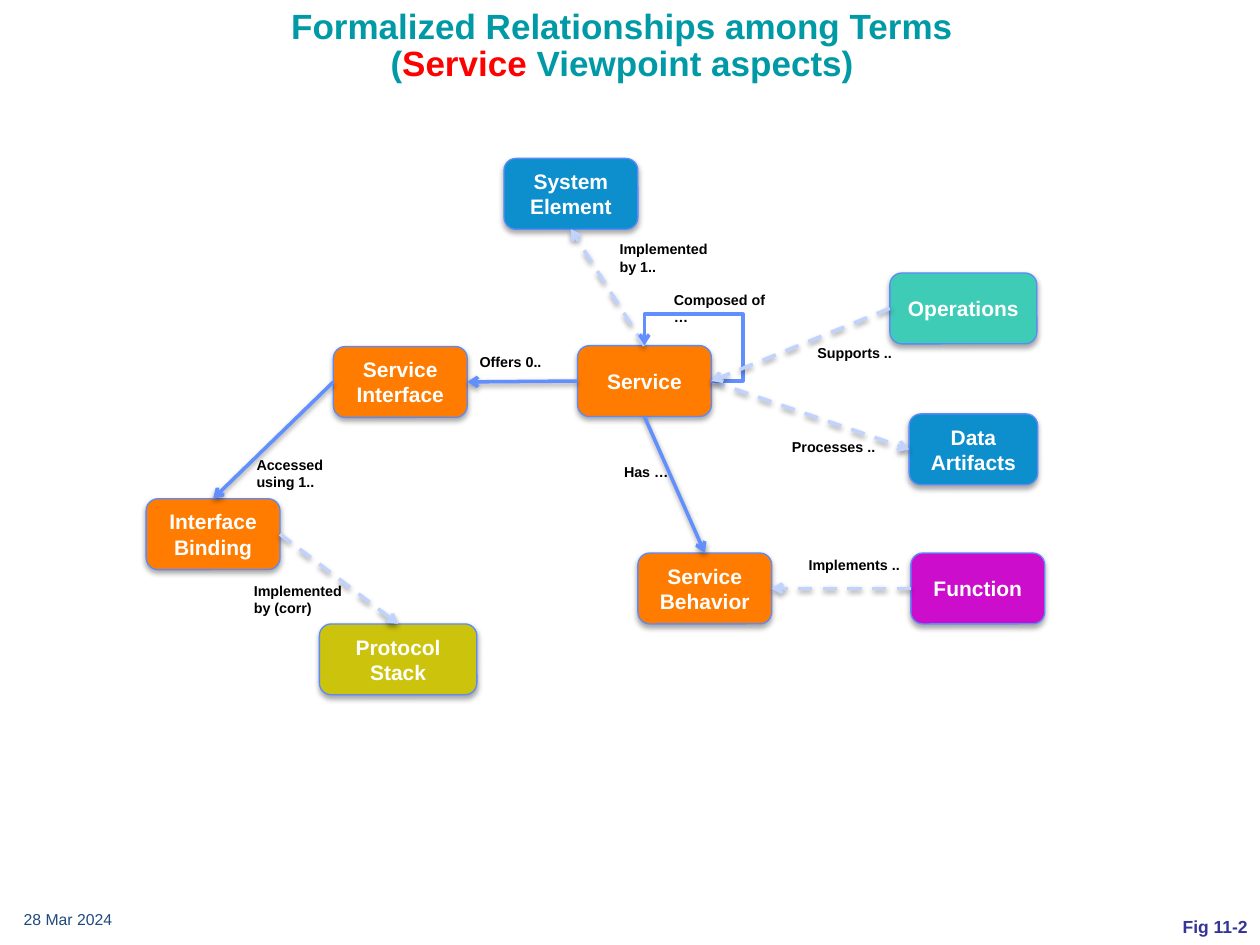
"""Build the slide on formalized relationships among service viewpoint terms."""
from lxml import etree
from pptx import Presentation
from pptx.dml.color import RGBColor
from pptx.enum import dml, shapes, text
from pptx.oxml.ns import qn
from pptx.util import Pt

TEAL = RGBColor(0x00, 0x99, 0xA6)
RED = RGBColor(0xFF, 0x00, 0x00)
BLACK = RGBColor(0x00, 0x00, 0x00)
WHITE = RGBColor(0xFF, 0xFF, 0xFF)
ORANGE = RGBColor(0xFF, 0x7C, 0x00)
BLUE = RGBColor(0x0C, 0x8F, 0xCC)
MINT = RGBColor(0x3F, 0xCC, 0xB6)
MAGENTA = RGBColor(0xCC, 0x0E, 0xCC)
OLIVE = RGBColor(0xCC, 0xC3, 0x0C)
BORDER = RGBColor(0x5B, 0x8A, 0xFB)
SOLID = RGBColor(0x61, 0x8F, 0xFD)
PALE = RGBColor(0xC0, 0xD2, 0xFE)
NAVY = RGBColor(0x1F, 0x49, 0x7D)
INDIGO = RGBColor(0x33, 0x33, 0x99)
TOP, LEFT, BOTTOM, RIGHT = range(4)


def add_span(para, wording, size, color, bold=True):
    """Add one formatted run to a paragraph."""
    span = para.add_run()
    span.text = wording
    span.font.name = "Arial"
    span.font.size = Pt(size)
    span.font.bold = bold
    span.font.color.rgb = color


def add_shadow(effects, distance, opacity):
    """Put a soft downward shadow into an effect list."""
    shadow = etree.SubElement(effects, qn("a:outerShdw"), blurRad=str(Pt(3.15)),
                              dist=str(Pt(distance)), dir="5400000", rotWithShape="0")
    tint = etree.SubElement(shadow, qn("a:srgbClr"), val=str(BLACK))
    etree.SubElement(tint, qn("a:alpha"), val=str(opacity * 1000))


deck = Presentation()
deck.slide_width, deck.slide_height = Pt(720), Pt(540)
page = deck.slides.add_slide(deck.slide_layouts[5])

title = page.shapes.title
title.left, title.top, title.width, title.height = Pt(31.5), Pt(1.5), Pt(648), Pt(60.5)
title.text_frame.auto_size = text.MSO_AUTO_SIZE.NONE
title.text_frame.vertical_anchor = text.MSO_ANCHOR.TOP
para = title.text_frame.paragraphs[0]
para.alignment = text.PP_ALIGN.CENTER
para.line_spacing = 0.9
add_span(para, "Formalized Relationships among Terms", 20, TEAL)
para.add_line_break()
add_span(para, "(", 20, TEAL)
add_span(para, "Service", 20, RED)
add_span(para, " Viewpoint aspects)", 20, TEAL)

terms = [
    ("Service\nBehavior", 364.5, 316, 76.5, ORANGE),
    ("System\nElement", 288, 90.5, 76.5, BLUE),
    ("Service", 330, 197.5, 76.5, ORANGE),
    ("Data\nArtifacts", 519.5, 236.5, 73.5, BLUE),
    ("Service\nInterface", 190.5, 198, 76.5, ORANGE),
    ("Interface\nBinding", 83.5, 285, 76.5, ORANGE),
    ("Operations", 508.5, 156, 84, MINT),
    ("Function", 520.5, 316, 76.5, MAGENTA),
    ("Protocol\nStack", 182.5, 356.5, 90, OLIVE),
]
boxes = {}
for name, left, top, width, color in terms:
    box = page.shapes.add_shape(shapes.MSO_SHAPE.ROUNDED_RECTANGLE,
                                Pt(left), Pt(top), Pt(width), Pt(40.5))
    box.fill.solid()
    box.fill.fore_color.rgb = color
    box.line.color.rgb = BORDER
    box.line.width = Pt(0.75)
    box.shadow.inherit = False
    add_shadow(box.element.spPr.find(qn("a:effectLst")), 1.8, 35)
    frame = box.text_frame
    frame.vertical_anchor = text.MSO_ANCHOR.MIDDLE
    for index, word in enumerate(name.split("\n")):
        para = frame.add_paragraph() if index else frame.paragraphs[0]
        para.alignment = text.PP_ALIGN.CENTER
        add_span(para, word, 12, WHITE)
    boxes[name.replace("\n", " ")] = box

relations = [
    ("Service", RIGHT, "Data Artifacts", LEFT, True),
    ("Service", TOP, "System Element", BOTTOM, True),
    ("Service", LEFT, "Service Interface", RIGHT, False),
    ("Service", BOTTOM, "Service Behavior", TOP, False),
    ("Service", RIGHT, "Service", TOP, False),
    ("Service Interface", LEFT, "Interface Binding", TOP, False),
    ("Operations", LEFT, "Service", RIGHT, True),
    ("Function", LEFT, "Service Behavior", RIGHT, True),
    ("Interface Binding", RIGHT, "Protocol Stack", TOP, True),
]
for source, source_side, target, target_side, dashed in relations:
    if source == target:
        link = page.shapes.add_connector(shapes.MSO_CONNECTOR.ELBOW,
                                         Pt(406.5), Pt(217.75), Pt(368.25), Pt(197.5))
        outline = link.element.spPr.find(qn("a:prstGeom"))
        outline.set("prst", "bentConnector4")
        guides = outline.find(qn("a:avLst"))
        for guide, value in (("adj1", -47100), ("adj2", 188900)):
            etree.SubElement(guides, qn("a:gd"), name=guide, fmla=f"val {value}")
    else:
        link = page.shapes.add_connector(shapes.MSO_CONNECTOR.STRAIGHT, 0, 0, 0, 0)
        link.begin_connect(boxes[source], source_side)
        link.end_connect(boxes[target], target_side)
    link.line.color.rgb = PALE if dashed else SOLID
    link.line.width = Pt(2)
    if dashed:
        link.line.dash_style = dml.MSO_LINE.DASH
    properties = link.element.spPr
    etree.SubElement(properties.find(qn("a:ln")), qn("a:tailEnd"), type="arrow")
    effects = etree.SubElement(properties, qn("a:effectLst"))
    if source != target:
        add_shadow(effects, 1.6, 38)

labels = [
    ("Processes ..", 445.5, 247, 63.5, 17.5, False),
    ("Implemented by 1..", 347, 134, 68.5, 27.5, True),
    ("Offers 0..", 267, 198, 54, 17.5, True),
    ("Has …", 349.5, 261, 65.5, 17.5, True),
    ("Composed of …", 378, 163, 68.5, 27.5, True),
    ("Accessed using 1..", 139.5, 257, 68.5, 27.5, True),
    ("Supports ..", 460, 193, 57.5, 17.5, False),
    ("Implements ..", 455, 314, 67.5, 17.5, False),
    ("Implemented by (corr)", 138, 329, 70.5, 27.5, True),
]
for wording, left, top, width, height, wrap in labels:
    box = page.shapes.add_textbox(Pt(left), Pt(top), Pt(width), Pt(height))
    box.text_frame.word_wrap = wrap
    box.text_frame.auto_size = text.MSO_AUTO_SIZE.SHAPE_TO_FIT_TEXT
    add_span(box.text_frame.paragraphs[0], wording, 8.2, BLACK)

footers = [
    ("28 Mar 2024", 6.5, 515, 66, 20, 9, NAVY, False, text.PP_ALIGN.LEFT),
    ("Fig 11-2", 584, 519, 136, 21, 10, INDIGO, True, text.PP_ALIGN.RIGHT),
]
for wording, left, top, width, height, size, color, bold, alignment in footers:
    box = page.shapes.add_textbox(Pt(left), Pt(top), Pt(width), Pt(height))
    box.text_frame.word_wrap = bold
    box.text_frame.vertical_anchor = text.MSO_ANCHOR.MIDDLE
    para = box.text_frame.paragraphs[0]
    para.alignment = alignment
    add_span(para, wording, size, color, bold)

deck.save("out.pptx")
